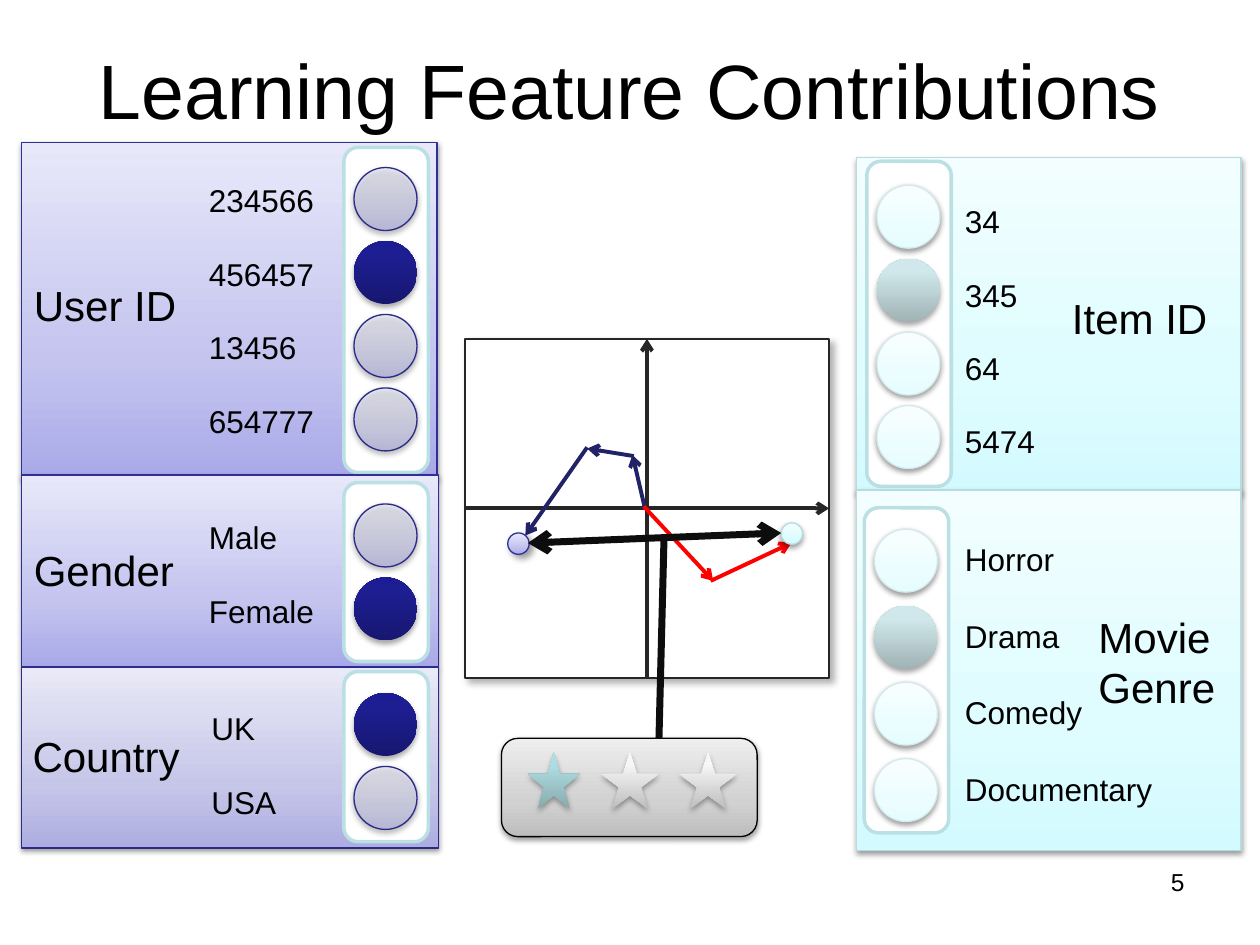
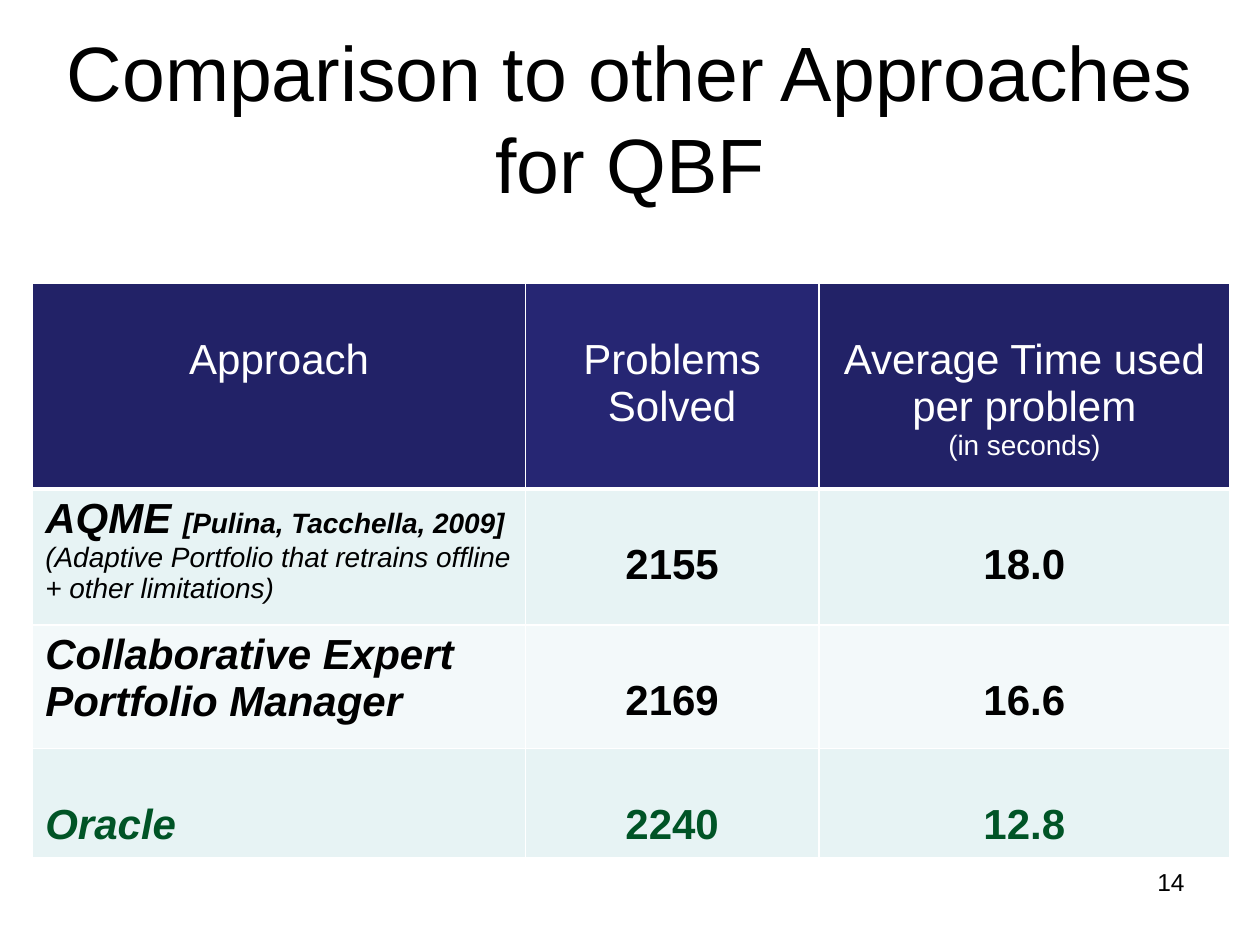
from dataclasses import dataclass
from typing import NamedTuple

from lxml.etree import SubElement
from pptx import Presentation
from pptx.dml.color import RGBColor
from pptx.enum.shapes import MSO_CONNECTOR as Connector, MSO_SHAPE as Preset
from pptx.enum.text import MSO_ANCHOR as Anchor, MSO_AUTO_SIZE as AutoSize, PP_ALIGN as Align
from pptx.oxml.ns import qn
from pptx.util import Emu, Inches, Pt

# Grid: 100 columns by 75 rows over the whole slide.
SLIDE_WIDTH, SLIDE_HEIGHT = Inches(10), Inches(7.5)
COLUMN, ROW = SLIDE_WIDTH / 100, SLIDE_HEIGHT / 75
FONT = "Arial"
BLACK, WHITE, NAVY = "000000", "FFFFFF", "222267"
RED, AXIS, BEAM, TRACK_LINE = "FF0000", "262626", "0D0D0D", "BBE0E3"
BULB_SIZE, DOT_SIZE = 5, 1.7


class Box(NamedTuple):
    left: float
    top: float
    width: float
    height: float


class Span(NamedTuple):
    text: str
    size: float
    color: str = BLACK
    bold: bool = False
    italic: bool = False


class Shadow(NamedTuple):
    opacity: int
    blur: float
    distance: float
    angle: int


class Look(NamedTuple):
    stops: tuple[tuple[int, str], ...]
    line: str | None
    shadow: Shadow | None
    opacity: int = 100
    weight: float = 0.75


class Stroke(NamedTuple):
    start: tuple[float, float]
    end: tuple[float, float]
    color: str
    weight: float = 2.25
    arrows: tuple[str, ...] = ("tailEnd",)


SOFT, TIGHT = Shadow(38, 3.15, 1.6, 90), Shadow(35, 3.15, 1.8, 90)
DIAGONAL, PALE_DIAGONAL = Shadow(40, 4, 3, 45), Shadow(29, 4, 3, 45)


def soft_look(low: str, middle: str, high: str, line: str,
              opacity: int = 100, shadow: Shadow = SOFT) -> Look:
    return Look(((0, low), (35, middle), (100, high)), line, shadow, opacity)


def strong_look(low: str, middle: str, high: str) -> Look:
    return Look(((0, low), (80, middle), (100, high)), None, TIGHT)


LILAC = ("A9A9E9", "C4C4EF", "E8E8FA", "2F2F98")
GREY_LILAC = ("ADADE1", "C6C6E9", "E9E9F7", "2A2A89")
ICE = ("D3FBFF", "DFFCFF", "F2FEFF", "B6DCDF")
USER_PANEL, COUNTRY_PANEL, ITEM_PANEL = (soft_look(*c) for c in (LILAC, GREY_LILAC, ICE))
USER_OFF = soft_look(*GREY_LILAC, opacity=60)
USER_ON = strong_look("171771", "1E1E93", "1C1C96")
ITEM_OFF = soft_look("E6FDFF", "ECFDFF", "F8FEFF", "D5E8EA")
ITEM_ON = strong_look("A0B3B5", "D0E8EB", "D1EAEC")
USER_DOT = soft_look(*LILAC, shadow=DIAGONAL)
RATING = soft_look("BDBDBD", "D1D1D1", "EEEEEE", BLACK)
STAR_ON = strong_look("87ABAE", "AFDEE2", "AFE0E4")
STAR_OFF = strong_look("BEBEBE", "F7F7F7", "F8F8F8")
TRACK = Look(((0, WHITE),), TRACK_LINE, None, weight=2)
PLOT = Look(((0, WHITE),), AXIS, PALE_DIAGONAL, weight=1)


@dataclass
class FeaturePanel:
    """One feature with its one-hot column of bulbs."""
    name: str
    name_box: Box
    frame: Box
    track: Box
    options: tuple[str, ...]
    active: int
    bulb_left: float
    bulb_top: float
    label_left: float
    label_drop: float
    look: Look
    bulb_off: Look
    bulb_on: Look
    pitch: float = 5.83


PANELS = [
    FeaturePanel("User ID", Box(1.7, 21.7, 18.8, 5), Box(1.7, 11.3, 33, 26.6),
                 Box(27.3, 11.7, 6.7, 25.8), ("234566", "456457", "13456", "654777"), 1,
                 28.1, 13.3, 15.6, 0.6, USER_PANEL, USER_OFF, USER_ON),
    FeaturePanel("Gender", Box(1.7, 42.7, 18.8, 5), Box(1.7, 37.7, 33.1, 15.2),
                 Box(27.3, 38.3, 6.7, 14.2), ("Male", "Female"), 1,
                 28.1, 40, 15.6, 0.65, USER_PANEL, USER_OFF, USER_ON),
    FeaturePanel("Country", Box(1.6, 57.5, 22.5, 5), Box(1.7, 53, 33.1, 14.3),
                 Box(27.3, 53.3, 6.7, 13.5), ("UK", "USA"), 0,
                 28.1, 55, 15.8, 0.8, COUNTRY_PANEL, USER_OFF, USER_ON),
    FeaturePanel("Item ID", Box(84.1, 22.7, 13.6, 5), Box(68, 12.5, 30.5, 26.6),
                 Box(68.8, 12.8, 6.7, 25.8), ("34", "345", "64", "5474"), 1,
                 69.6, 14.7, 75.6, 0.85, ITEM_PANEL, ITEM_OFF, ITEM_ON),
    FeaturePanel("Movie Genre", Box(86.2, 48, 12, 9.1), Box(68, 38.9, 30.5, 28.6),
                 Box(68.6, 40.3, 6.7, 25.8), ("Horror", "Drama", "Comedy", "Documentary"), 1,
                 69.4, 42, 75.6, 0.4, ITEM_PANEL, ITEM_OFF, ITEM_ON, pitch=6.07),
]
PLOT_BOX = Box(36.9, 26.9, 28.9, 26.9)
VECTORS = [
    Stroke((51.2, 40.4), (50.2, 36.1), NAVY),
    Stroke((50.3, 36.2), (46.6, 35.6), NAVY),
    Stroke((46.6, 35.5), (41.7, 42.5), NAVY),
    Stroke((51.1, 40.2), (56.6, 46.1), RED),
    Stroke((56.4, 46.1), (62.8, 43.1), RED),
]
BEAMS = [
    Stroke((62, 42.3), (41.9, 43.1), BEAM, 4, ("headEnd", "tailEnd")),
    Stroke((52.7, 42.8), (52.3, 58.6), BEAM, 4, ()),
]
STARS = [(41.9, 4.1, STAR_ON), (47.7, 4.6, STAR_OFF), (53.9, 4.6, STAR_OFF)]


def rgb(color: str) -> RGBColor:
    return RGBColor.from_string(color)


def place(box: Box) -> tuple[Emu, ...]:
    """Turn grid columns and rows into slide lengths."""
    return (Emu(round(box.left * COLUMN)), Emu(round(box.top * ROW)),
            Emu(round(box.width * COLUMN)), Emu(round(box.height * ROW)))


def add_color(parent, color: str, opacity: int) -> None:
    node = SubElement(parent, qn("a:srgbClr"), val=color)
    if opacity < 100:
        SubElement(node, qn("a:alpha"), val=str(opacity * 1000))


def add_shadow(shape, shadow: Shadow) -> None:
    effects = shape.element.spPr.find(qn("a:effectLst"))
    outer = SubElement(effects, qn("a:outerShdw"), blurRad=str(Pt(shadow.blur)),
                       dist=str(Pt(shadow.distance)), dir=str(shadow.angle * 60000),
                       rotWithShape="0")
    add_color(outer, BLACK, shadow.opacity)


def add_figure(page, preset: Preset, box: Box, look: Look):
    shape = page.shapes.add_shape(preset, *place(box))
    shape.shadow.inherit = False
    if len(look.stops) == 1:
        shape.fill.solid()
        shape.fill.fore_color.rgb = rgb(look.stops[0][1])
    else:
        shape.fill.gradient()
        shape.fill.gradient_angle = 90
        stop_list = shape.element.spPr.find(".//" + qn("a:gsLst"))
        stop_list.clear()
        for position, color in look.stops:
            stop = SubElement(stop_list, qn("a:gs"), pos=str(position * 1000))
            add_color(stop, color, look.opacity)
    if look.line:
        shape.line.color.rgb = rgb(look.line)
        shape.line.width = Pt(look.weight)
    else:
        shape.line.fill.background()
    if look.shadow:
        add_shadow(shape, look.shadow)
    return shape


def add_spans(para, spans: list[Span], align: Align) -> None:
    para.alignment = align
    for span in spans:
        run = para.add_run()
        run.text = span.text
        run.font.name, run.font.size = FONT, Pt(span.size)
        run.font.bold, run.font.italic = span.bold, span.italic
        run.font.color.rgb = rgb(span.color)


def add_text(page, box: Box, span: Span, align: Align = Align.LEFT) -> None:
    frame = page.shapes.add_textbox(*place(box)).text_frame
    frame.word_wrap = True
    add_spans(frame.paragraphs[0], [span], align)


def add_stroke(page, stroke: Stroke):
    (x1, y1), (x2, y2) = stroke.start, stroke.end
    line = page.shapes.add_connector(Connector.STRAIGHT, *place(Box(x1, y1, x2, y2)))
    line.line.color.rgb = rgb(stroke.color)
    line.line.width = Pt(stroke.weight)
    for arrow in stroke.arrows:
        SubElement(line.line._get_or_add_ln(), qn("a:" + arrow), type="arrow")
    SubElement(line.element.spPr, qn("a:effectLst"))
    return line


def add_page(deck, title_lines: list[str], title_box: Box, number: int):
    page = deck.slides.add_slide(deck.slide_layouts[5])
    title = page.shapes.title
    title.left, title.top, title.width, title.height = place(title_box)
    frame = title.text_frame
    frame.auto_size, frame.word_wrap = AutoSize.NONE, True
    frame.vertical_anchor = Anchor.MIDDLE
    para = frame.paragraphs[0]
    for index, text in enumerate(title_lines):
        if index:
            para.add_line_break()
        add_spans(para, [Span(text, 44)], Align.CENTER)
    add_text(page, Box(71.7, 68.3, 23.3, 5.2), Span(str(number), 14), Align.RIGHT)
    return page


def add_panel(page, panel: FeaturePanel) -> None:
    add_figure(page, Preset.RECTANGLE, panel.frame, panel.look)
    add_figure(page, Preset.ROUNDED_RECTANGLE, panel.track, TRACK)
    add_text(page, panel.name_box, Span(panel.name, 24))
    for index, option in enumerate(panel.options):
        top = panel.bulb_top + index * panel.pitch
        look = panel.bulb_on if index == panel.active else panel.bulb_off
        add_figure(page, Preset.OVAL, Box(panel.bulb_left, top, BULB_SIZE, BULB_SIZE), look)
        add_text(page, Box(panel.label_left, top + panel.label_drop, 18, 4), Span(option, 18))


def add_plot(page) -> None:
    plot = add_figure(page, Preset.RECTANGLE, PLOT_BOX, PLOT)
    for start_side, end_side in ((1, 3), (2, 0)):
        axis = add_stroke(page, Stroke((0, 0), (1, 1), AXIS))
        axis.begin_connect(plot, start_side)
        axis.end_connect(plot, end_side)
    for vector in VECTORS:
        add_stroke(page, vector)
    for left, top, look in ((40.3, 42.3, USER_DOT), (62, 41.5, ITEM_PANEL)):
        add_figure(page, Preset.OVAL, Box(left, top, DOT_SIZE, DOT_SIZE), look)


def build_features(deck) -> None:
    page = add_page(deck, ["Learning Feature Contributions"], Box(5, 0.8, 90, 12.5), 5)
    for panel in PANELS:
        add_panel(page, panel)
    add_plot(page)
    add_figure(page, Preset.ROUNDED_RECTANGLE, Box(39.8, 58.6, 20.3, 7.8), RATING)
    for left, width, look in STARS:
        add_figure(page, Preset.STAR_5_POINT, Box(left, 59.7, width, 4.5), look)
    for beam in BEAMS:
        add_stroke(page, beam)


def fill_cell(cell, paras: list[list[Span]], fill: str, align: Align,
              lowered: bool, bottom_weight: float) -> None:
    for side, weight in (("L", 1), ("R", 1), ("B", bottom_weight)):
        border = SubElement(cell._tc.get_or_add_tcPr(), qn("a:ln" + side), w=str(Pt(weight)))
        add_color(SubElement(border, qn("a:solidFill")), WHITE, 100)
    cell.fill.solid()
    cell.fill.fore_color.rgb = rgb(fill)
    if lowered:
        cell.margin_top = Inches(0.42)
    frame = cell.text_frame
    for index, spans in enumerate(paras):
        add_spans(frame.add_paragraph() if index else frame.paragraphs[0], spans, align)


def build_comparison(deck) -> None:
    page = add_page(deck, ["Comparison to other Approaches", "for QBF"], Box(0, 3, 100, 12.5), 14)
    columns, rows = (39.1, 23.3, 32.6), (16.3, 10.8, 9.8, 8.4)
    table = page.shapes.add_table(len(rows), len(columns), *place(
        Box(2.6, 22.5, sum(columns), sum(rows)))).table
    table.first_row = table.horz_banding = False
    for index, width in enumerate(columns):
        table.columns[index].width = Emu(round(width * COLUMN))
    for index, height in enumerate(rows):
        table.rows[index].height = Emu(round(height * ROW))

    headers = [["Approach"], ["Problems Solved"], ["Average Time used per problem", "(in seconds)"]]
    for index, (lines, fill) in enumerate(zip(headers, (NAVY, "262673", NAVY))):
        paras = [[Span(text, size, WHITE)] for text, size in zip(lines, (24, 16))]
        fill_cell(table.cell(0, index), paras, fill, Align.CENTER, True, 3)

    green = "005426"
    aqme = [[Span("AQME ", 24, BLACK, True, True),
             Span("[Pulina, Tacchella, 2009]", 16, BLACK, True, True)],
            [Span("(Adaptive Portfolio that retrains offline + other limitations)",
                  16, italic=True)]]
    manager = [[Span("Collaborative Expert Portfolio Manager", 24, BLACK, True, True)]]
    oracle = [[Span("Oracle", 24, green, True, True)]]
    results = [(aqme, "2155", "18.0", BLACK, "E7F3F4", False),
               (manager, "2169", "16.6", BLACK, "F3F9FA", False),
               (oracle, "2240", "12.8", green, "E7F3F4", True)]
    for row, (approach, solved, seconds, color, fill, lowered) in enumerate(results, 1):
        fill_cell(table.cell(row, 0), approach, fill, Align.LEFT, lowered, 1)
        for column, value in enumerate((solved, seconds), 1):
            fill_cell(table.cell(row, column), [[Span(value, 24, color, True)]],
                      fill, Align.CENTER, True, 1)


def main() -> None:
    deck = Presentation()
    deck.slide_width, deck.slide_height = SLIDE_WIDTH, SLIDE_HEIGHT
    build_features(deck)
    build_comparison(deck)
    deck.save("out.pptx")


if __name__ == "__main__":
    main()
